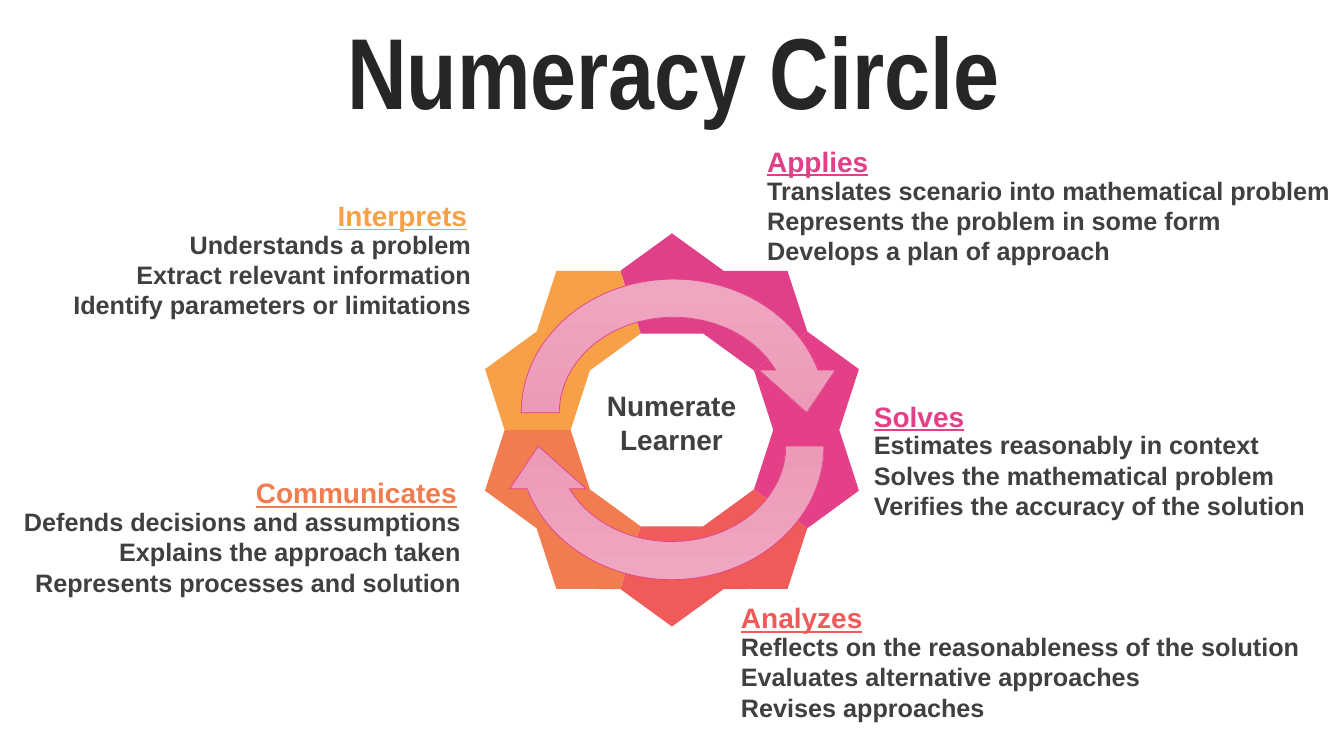
from copy import deepcopy
from math import cos, radians, sin

from pptx import Presentation
from pptx.dml.color import RGBColor
from pptx.enum.shapes import MSO_SHAPE
from pptx.enum.text import MSO_ANCHOR, PP_ALIGN
from pptx.util import Inches, Pt

LEFT, MID, RIGHT = PP_ALIGN.LEFT, PP_ALIGN.CENTER, PP_ALIGN.RIGHT
MIDDLE = MSO_ANCHOR.MIDDLE
ARROW = MSO_SHAPE.CIRCULAR_ARROW

WIDE, HIGH = Inches(13.333), Inches(7.5)

INK = RGBColor(0x26, 0x26, 0x26)
GREY = RGBColor(0x40, 0x40, 0x40)
PINK = RGBColor(0xE0, 0x40, 0x88)
ROSE = RGBColor(0xE4, 0x40, 0x88)
RED = RGBColor(0xF0, 0x5A, 0x59)
CORAL = RGBColor(0xF0, 0x7C, 0x4F)
AMBER = RGBColor(0xF8, 0xA0, 0x47)
SHADES = (RGBColor(0xF0, 0xA8, 0xC2), RGBColor(0xEC, 0x9A, 0xB7),
          RGBColor(0xED, 0x87, 0xAC))

# Ring: centre in percent of the slide, radii in percent of its height
HUB = (50, 56.87)
TIP, NOTCH, INNER = 26, 22.13, 13.4
PIECE = ((TIP, 0), (NOTCH, 18), (TIP, 36), (NOTCH, 54),
         (INNER, 54), (INNER, 18), (INNER, -18), (NOTCH, -18))

# Heading, colour, alignment, left, top, width, lines
STEPS = (
    ("Applies", PINK, LEFT, 56.34, 18.4, 44.94,
     ("Translates scenario into mathematical problem",
      "Represents the problem in some form",
      "Develops a plan of approach")),
    ("Solves", ROSE, LEFT, 64.29, 52.13, 35.48,
     ("Estimates reasonably in context",
      "Solves the mathematical problem",
      "Verifies the accuracy of the solution")),
    ("Analyzes", RED, LEFT, 54.39, 78.8, 45.61,
     ("Reflects on the reasonableness of the solution",
      "Evaluates alternative approaches",
      "Revises approaches")),
    ("Communicates", CORAL, RIGHT, -0.08, 62.27, 35.11,
     ("Defends decisions and assumptions",
      "Explains the approach taken",
      "Represents processes and solution")),
    ("Interprets", AMBER, RIGHT, 4.43, 25.6, 31.36,
     ("Understands a problem",
      "Extract relevant information",
      "Identify parameters or limitations")),
)


def area(x, y, w, h):
    """Turn percent of the slide into lengths."""
    return (int(WIDE * x / 100), int(HIGH * y / 100),
            int(WIDE * w / 100), int(HIGH * h / 100))


def add_text(slide, box, lines, size, color, align, font="Arial", line=False):
    frame = slide.shapes.add_textbox(*area(*box)).text_frame
    frame.word_wrap = True
    for i, words in enumerate(lines):
        para = frame.paragraphs[0] if i == 0 else frame.add_paragraph()
        para.alignment = align
        run = para.add_run()
        run.text = words
        run.font.name, run.font.size = font, Pt(size)
        run.font.bold, run.font.underline = True, line
        run.font.color.rgb = color
    return frame


def add_title(slide):
    frame = add_text(slide, (2.63, 4.93, 94.97, 10.53), ["Numeracy Circle"],
                     72, INK, MID, "Arial Narrow")
    frame.vertical_anchor = MIDDLE
    para = frame.paragraphs[0]
    para.line_spacing, para.space_before = 0.9, Pt(10)


def add_piece(slide, turn, color):
    """Draw two points of the star ring, clockwise from turn degrees."""
    spots = []
    for reach, shift in PIECE:
        angle = radians(turn + shift)
        spots.append((int(WIDE * HUB[0] / 100 + HIGH * reach / 100 * sin(angle)),
                      int(HIGH * HUB[1] / 100 - HIGH * reach / 100 * cos(angle))))
    path = slide.shapes.build_freeform(*spots[0])
    path.add_line_segments(spots[1:], close=True)
    piece = path.convert_to_shape()
    piece.shadow.inherit = False
    piece.fill.solid()
    piece.fill.fore_color.rgb = color
    piece.line.fill.background()


def add_arrow(slide, x, y, turn):
    arrow = slide.shapes.add_shape(ARROW, *area(x, y, 25.51, 40.4))
    arrow.rotation = turn
    arrow.shadow.inherit = False
    arrow.line.color.rgb = PINK
    arrow.line.width = Pt(0.5)
    fill = arrow.fill
    fill.gradient()
    fill.gradient_angle = 270
    first = arrow._element.spPr.xpath(".//a:gs")[0]
    first.addnext(deepcopy(first))
    for i, (stop, color) in enumerate(zip(fill.gradient_stops, SHADES)):
        stop.position = i / 2
        stop.color.rgb = color


def add_step(slide, name, color, align, x, y, w, lines):
    add_text(slide, (x, y + 4.07, w, 17.47), lines, 18, GREY, align)
    add_text(slide, (x, y, w - 0.3, 5.87), [name], 20, color, align, line=True)


def main():
    deck = Presentation()
    deck.slide_width, deck.slide_height = WIDE, HIGH
    slide = deck.slides.add_slide(deck.slide_layouts[6])
    add_title(slide)
    for i, step in enumerate(STEPS):
        add_piece(slide, 72 * i, step[1])
    add_text(slide, (44.04, 50.8, 11.85, 16.4), ["Numerate Learner"],
             20, GREY, MID)
    for step in STEPS:
        add_step(slide, *step)
    add_arrow(slide, 37.36, 34.4, 0)
    add_arrow(slide, 37.21, 38.8, 180)
    deck.save("out.pptx")


if __name__ == "__main__":
    main()
